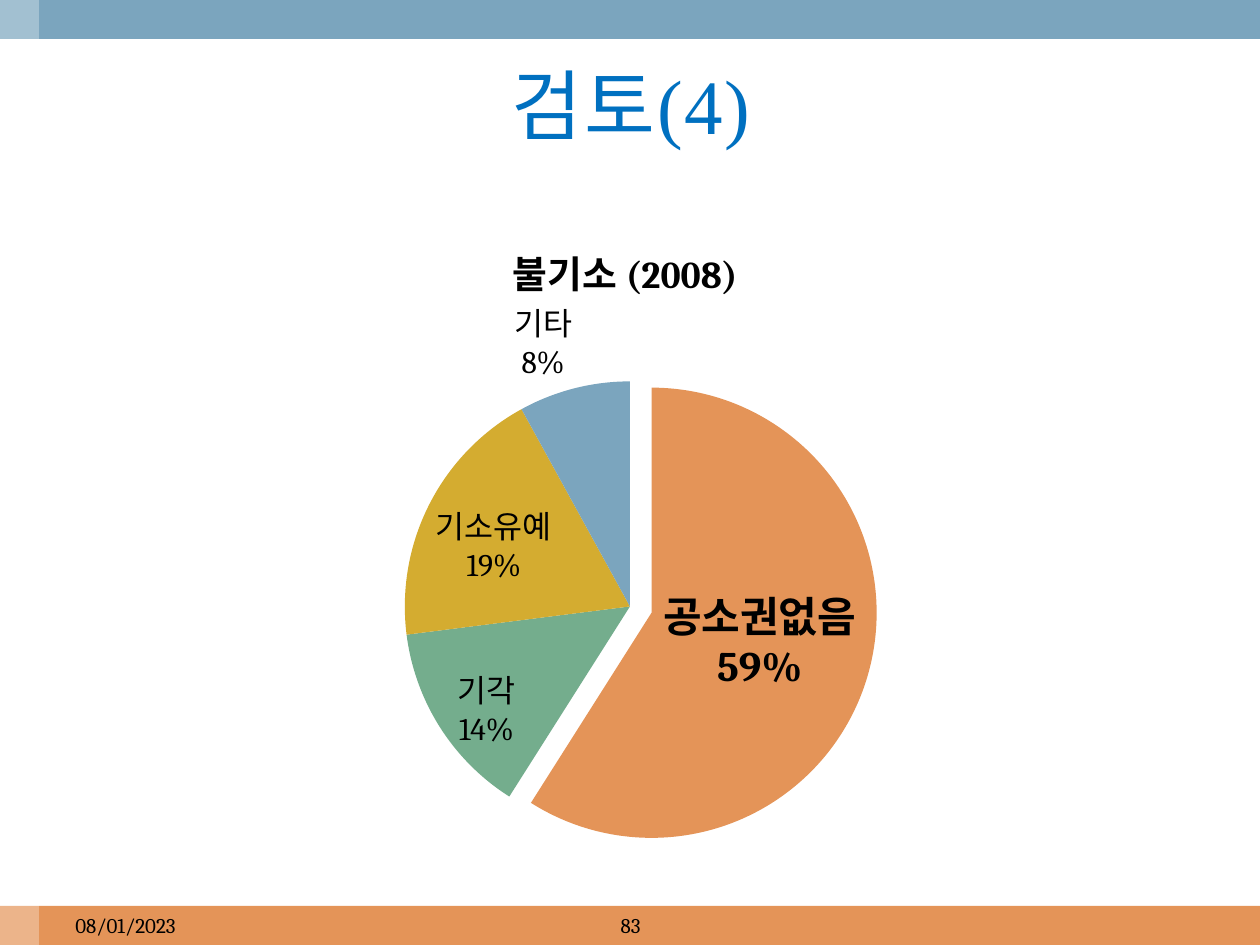
from dataclasses import dataclass

from lxml import etree
from pptx import Presentation
from pptx.chart import data as chart_data
from pptx.dml import color
from pptx.enum import chart as chart_enum
from pptx.enum import shapes, text
from pptx.oxml import ns
from pptx.util import Inches, Pt

BODY_FONT = "Cambria"
BLACK = "000000"
ORANGE, GREEN, GOLD, BLUE = "E49458", "74AD8D", "D4AC30", "7BA5BE"
BAND_HEIGHT = 0.31
FOOTER_TOP = 7.19
LABEL_POSITION = chart_enum.XL_LABEL_POSITION


@dataclass
class Band:
    left: float
    top: float
    width: float
    height: float
    fill: str
    opacity: int = 100


@dataclass
class Footer:
    left: float
    width: float
    wording: str
    alignment: text.PP_ALIGN


@dataclass
class Slice:
    category: str
    value: int
    fill: str
    position: chart_enum.XL_LABEL_POSITION = LABEL_POSITION.INSIDE_END
    shift_x: float = 0
    shift_y: float = 0
    size: float = 18
    bold: bool = False


BANDS = [
    Band(0, FOOTER_TOP, 10, BAND_HEIGHT, ORANGE),
    Band(0, 0, 10, BAND_HEIGHT, BLUE),
    Band(0, 0, BAND_HEIGHT, 7.5, "FFFFFF", 30),
]
FOOTERS = [
    Footer(0.5, 2.33, "08/01/2023", text.PP_ALIGN.LEFT),
    Footer(3.42, 3.17, "83", text.PP_ALIGN.CENTER),
]
SLICES = [
    Slice("공소권없음", 59, ORANGE, LABEL_POSITION.CENTER, shift_y=-0.01, size=24, bold=True),
    Slice("기각", 14, GREEN, shift_x=0.01, shift_y=0.04),
    Slice("기소유예", 19, GOLD, shift_y=-0.01),
    Slice("기타", 8, BLUE, LABEL_POSITION.OUTSIDE_END),
]


def rgb(value: str) -> color.RGBColor:
    return color.RGBColor.from_string(value)


def style_font(font, size: float, name: str = BODY_FONT, fill: str = BLACK, bold: bool = False) -> None:
    font.size = Pt(size)
    font.name = name
    font.bold = bold
    font.color.rgb = rgb(fill)


def add_run(paragraph, wording: str, size: float, **style):
    run = paragraph.add_run()
    run.text = wording
    style_font(run.font, size, **style)
    return run


def draw_band(slide, band: Band) -> None:
    shape = slide.shapes.add_shape(
        shapes.MSO_SHAPE.RECTANGLE,
        Inches(band.left), Inches(band.top), Inches(band.width), Inches(band.height),
    )
    shape.shadow.inherit = False
    shape.line.fill.background()
    shape.fill.solid()
    shape.fill.fore_color.rgb = rgb(band.fill)
    if band.opacity < 100:
        solid_color = shape.fill._xPr.find(ns.qn("a:solidFill"))[0]
        etree.SubElement(solid_color, ns.qn("a:alpha"), val=str(band.opacity * 1000))


def draw_title(slide) -> None:
    title = slide.shapes.title
    title.left, title.top = Inches(0.33), Inches(0.31)
    title.width, title.height = Inches(9.36), Inches(1.03)
    title.text_frame.vertical_anchor = text.MSO_ANCHOR.MIDDLE
    paragraph = title.text_frame.paragraphs[0]
    paragraph.alignment = text.PP_ALIGN.CENTER
    run = add_run(paragraph, "검토(4)", 44, name="Times New Roman", fill="0070C0")
    run.font._element.set("spc", "100")


def draw_footer(slide, footer: Footer) -> None:
    box = slide.shapes.add_textbox(
        Inches(footer.left), Inches(FOOTER_TOP), Inches(footer.width), Inches(BAND_HEIGHT)
    )
    box.text_frame.word_wrap = True
    box.text_frame.vertical_anchor = text.MSO_ANCHOR.MIDDLE
    paragraph = box.text_frame.paragraphs[0]
    paragraph.alignment = footer.alignment
    add_run(paragraph, footer.wording, 12)


def set_layout(parent, position: int, **settings) -> None:
    for old in parent.findall(ns.qn("c:layout")):
        parent.remove(old)
    layout = etree.Element(ns.qn("c:layout"))
    manual = etree.SubElement(layout, ns.qn("c:manualLayout"))
    for name, value in settings.items():
        etree.SubElement(manual, ns.qn(f"c:{name}"), val=str(value))
    parent.insert(position, layout)


def show_category_and_percent(labels) -> None:
    flags = {"showVal": "0", "showCatName": "1", "showPercent": "1"}
    for name, value in flags.items():
        labels.find(ns.qn(f"c:{name}")).set("val", value)
    separator = etree.Element(ns.qn("c:separator"))
    separator.text = "\n"
    labels.find(ns.qn("c:showBubbleSize")).addnext(separator)


def label_slices(series) -> None:
    labels = series.data_labels
    style_font(labels.font, 18)
    for index, part in enumerate(SLICES):
        label = series.points[index].data_label
        style_font(label.font, part.size, bold=part.bold)
        label.position = part.position
    show_category_and_percent(labels._element)
    for part, element in zip(SLICES, labels._element.findall(ns.qn("c:dLbl"))):
        show_category_and_percent(element)
        if part.shift_x or part.shift_y:
            set_layout(element, 1, x=part.shift_x, y=part.shift_y)


def draw_pie(slide) -> None:
    data = chart_data.CategoryChartData()
    data.categories = [part.category for part in SLICES]
    data.add_series("Series 1", [part.value for part in SLICES])
    chart = slide.shapes.add_chart(
        chart_enum.XL_CHART_TYPE.PIE, Inches(0.5), Inches(1.75), Inches(9), Inches(4.95), data
    ).chart
    style_font(chart.font, 18)
    chart.has_legend = False
    chart.has_title = True
    add_run(chart.chart_title.text_frame.paragraphs[0], "불기소 (2008)", 21.6, bold=True)
    set_layout(chart.chart_title._element, 1, xMode="edge", yMode="edge", x=0.39, y=0.02)

    plot = chart.plots[0]
    plot.vary_by_categories = True
    set_layout(
        plot._element.getparent(), 0,
        layoutTarget="inner", xMode="edge", yMode="edge", x=0.08, y=0.258, w=0.84, h=0.722,
    )

    series = plot.series[0]
    for index, part in enumerate(SLICES):
        point_format = series.points[index].format
        point_format.fill.solid()
        point_format.fill.fore_color.rgb = rgb(part.fill)
        point_format.line.fill.background()
    first_point = series._element.find(ns.qn("c:dPt"))
    explosion = etree.Element(ns.qn("c:explosion"), val="10")
    first_point.find(ns.qn("c:spPr")).addprevious(explosion)
    label_slices(series)


def main() -> None:
    presentation = Presentation()
    presentation.slide_width, presentation.slide_height = Inches(10), Inches(7.5)
    slide = presentation.slides.add_slide(presentation.slide_layouts[5])
    for band in BANDS:
        draw_band(slide, band)
    draw_title(slide)
    draw_pie(slide)
    for footer in FOOTERS:
        draw_footer(slide, footer)
    presentation.save("out.pptx")


if __name__ == "__main__":
    main()
